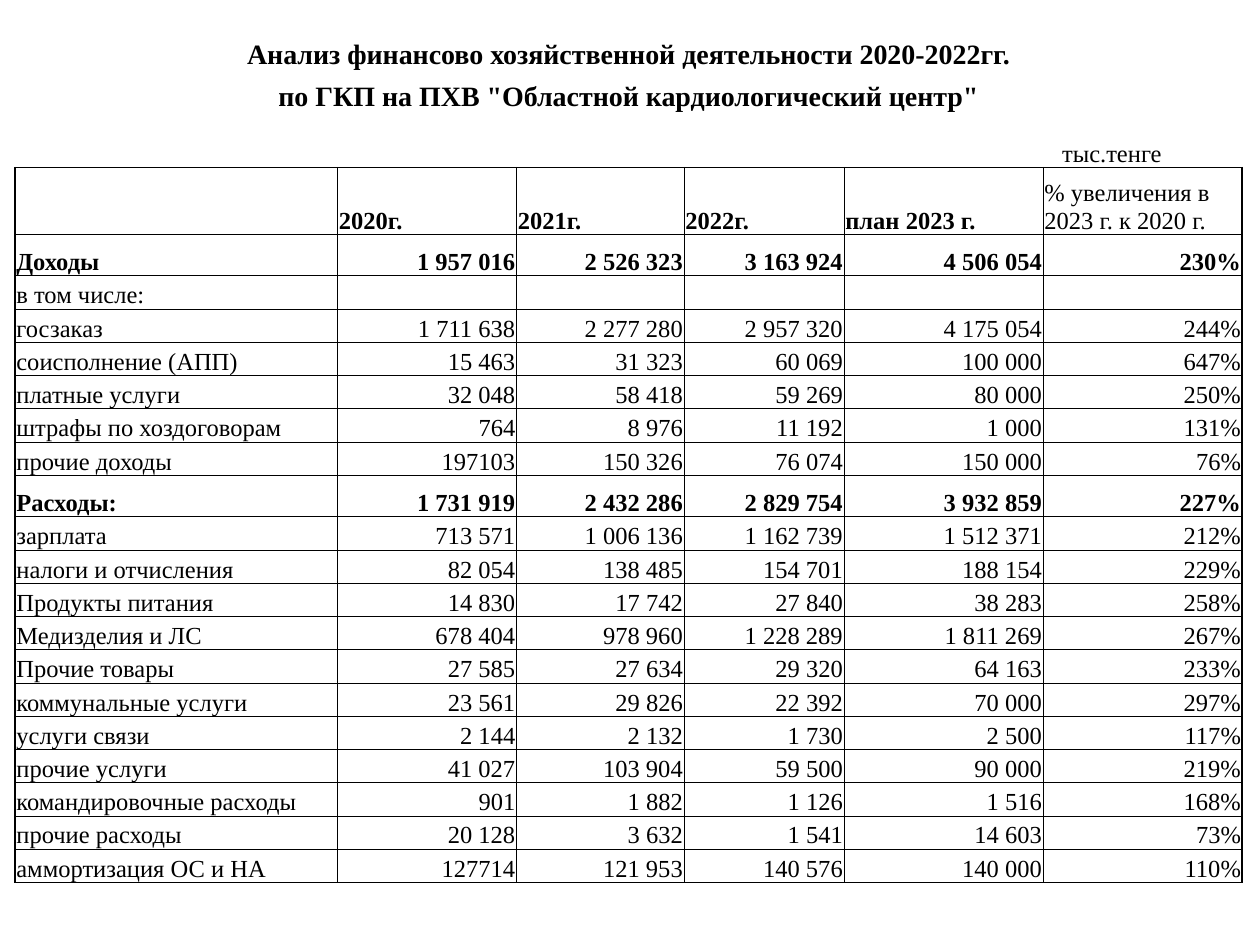
from lxml import etree
from pptx import Presentation
from pptx import util as u
from pptx.dml.color import RGBColor
from pptx.enum import text
from pptx.oxml import ns

COLORS = {"ink": "000000"}
FONT = "Times New Roman"
COLUMNS = [2.56, 1.42, 1.33, 1.27, 1.58, 1.58]
TITLES = [
    "Анализ финансово хозяйственной деятельности 2020-2022гг.",
    'по ГКП на ПХВ "Областной кардиологический центр"',
]
UNIT = "тыс.тенге"
HEADERS = ["", "2020г.", "2021г.", "2022г.", "план 2023 г.", "% увеличения в 2023 г. к 2020 г."]
TOTALS = ("Доходы", "Расходы:")
BODY = [
    ["Доходы", "1 957 016", "2 526 323", "3 163 924", "4 506 054", "230%"],
    ["в том числе:", "", "", "", "", ""],
    ["госзаказ", "1 711 638", "2 277 280", "2 957 320", "4 175 054", "244%"],
    ["соисполнение (АПП)", "15 463", "31 323", "60 069", "100 000", "647%"],
    ["платные услуги", "32 048", "58 418", "59 269", "80 000", "250%"],
    ["штрафы по хоздоговорам", "764", "8 976", "11 192", "1 000", "131%"],
    ["прочие доходы", "197103", "150 326", "76 074", "150 000", "76%"],
    ["Расходы:", "1 731 919", "2 432 286", "2 829 754", "3 932 859", "227%"],
    ["зарплата", "713 571", "1 006 136", "1 162 739", "1 512 371", "212%"],
    ["налоги и отчисления", "82 054", "138 485", "154 701", "188 154", "229%"],
    ["Продукты питания", "14 830", "17 742", "27 840", "38 283", "258%"],
    ["Медизделия и ЛС", "678 404", "978 960", "1 228 289", "1 811 269", "267%"],
    ["Прочие товары", "27 585", "27 634", "29 320", "64 163", "233%"],
    ["коммунальные услуги", "23 561", "29 826", "22 392", "70 000", "297%"],
    ["услуги связи", "2 144", "2 132", "1 730", "2 500", "117%"],
    ["прочие услуги", "41 027", "103 904", "59 500", "90 000", "219%"],
    ["командировочные расходы", "901", "1 882", "1 126", "1 516", "168%"],
    ["прочие расходы", "20 128", "3 632", "1 541", "14 603", "73%"],
    ["аммортизация ОС и НА", "127714", "121 953", "140 576", "140 000", "110%"],
]
UNIT_ROW = len(TITLES)
HEADER_ROW = UNIT_ROW + 1
FIRST_BODY_ROW = HEADER_ROW + 1
LAST_COL = len(COLUMNS) - 1
TOTAL_HEIGHT = 0.33
ITEM_HEIGHT = 4.49 / (len(BODY) - len(TOTALS))


def write_cell(cell, content, size=14, bold=False, align=text.PP_ALIGN.LEFT):
    cell.vertical_anchor = text.MSO_ANCHOR.BOTTOM
    cell.margin_left = cell.margin_right = cell.margin_top = u.Inches(0.01)
    cell.margin_bottom = u.Inches(0)
    p = cell.text_frame.paragraphs[0]
    p.alignment = align
    if not content:
        p._p.get_or_add_endParaRPr().set("sz", str(size * 100))
        return
    p.text = content
    font = p.runs[0].font
    font.name = FONT
    font.size = u.Pt(size)
    font.bold = bold
    font.color.rgb = RGBColor.from_string(COLORS["ink"])


def set_borders(cell, widths):
    tc_pr = cell._tc.get_or_add_tcPr()
    for i, (side, width) in enumerate(zip("LRTB", widths)):
        ln = etree.Element(ns.qn(f"a:ln{side}"), w=str(u.Pt(width)))
        if width:
            fill = etree.SubElement(ln, ns.qn("a:solidFill"))
            etree.SubElement(fill, ns.qn("a:srgbClr"), val=COLORS["ink"])
        else:
            etree.SubElement(ln, ns.qn("a:noFill"))
        tc_pr.insert(i, ln)


def border_widths(row, col):
    if row < UNIT_ROW:
        return 0, 0, 0, 0
    if row == UNIT_ROW:
        return 0, 0, 0, 1
    left = 1 if col == 0 else 0.5
    right = 1 if col == LAST_COL else 0.5
    top = 1 if row == HEADER_ROW else 0.5
    return left, right, top, 0.5


def add_grid(s):
    body_heights = [TOTAL_HEIGHT if row[0] in TOTALS else ITEM_HEIGHT for row in BODY]
    heights = [0.33, 0.33, 0.44, 0.53] + body_heights
    frame = s.shapes.add_table(
        len(heights), len(COLUMNS), u.Inches(0.12), u.Inches(0.23),
        u.Inches(sum(COLUMNS)), u.Inches(sum(heights)))
    table = frame.table
    table.first_row = table.horz_banding = False
    for column, width in zip(table.columns, COLUMNS):
        column.width = u.Inches(width)
    for i, height in enumerate(heights):
        table.rows[i].height = u.Inches(height)
        for j in range(len(COLUMNS)):
            cell = table.cell(i, j)
            cell.fill.background()
            set_borders(cell, border_widths(i, j))
    return table


def fill_heading(table):
    for i, title in enumerate(TITLES):
        table.cell(i, 0).merge(table.cell(i, LAST_COL))
        write_cell(table.cell(i, 0), title, 16, True, text.PP_ALIGN.CENTER)
    for j in range(LAST_COL):
        write_cell(table.cell(UNIT_ROW, j), "")
    unit = table.cell(UNIT_ROW, LAST_COL)
    write_cell(unit, UNIT)
    unit.margin_left = u.Inches(0.15)
    for j, header in enumerate(HEADERS):
        write_cell(table.cell(HEADER_ROW, j), header, bold=j < LAST_COL)


def fill_body(table):
    for i, row in enumerate(BODY, FIRST_BODY_ROW):
        for j, value in enumerate(row):
            align = text.PP_ALIGN.RIGHT if j else text.PP_ALIGN.LEFT
            write_cell(table.cell(i, j), value, bold=row[0] in TOTALS, align=align)


def main():
    prs = Presentation()
    prs.slide_width, prs.slide_height = u.Inches(10), u.Inches(7.5)
    s = prs.slides.add_slide(prs.slide_layouts[6])
    table = add_grid(s)
    fill_heading(table)
    fill_body(table)
    prs.save("out.pptx")


if __name__ == "__main__":
    main()
